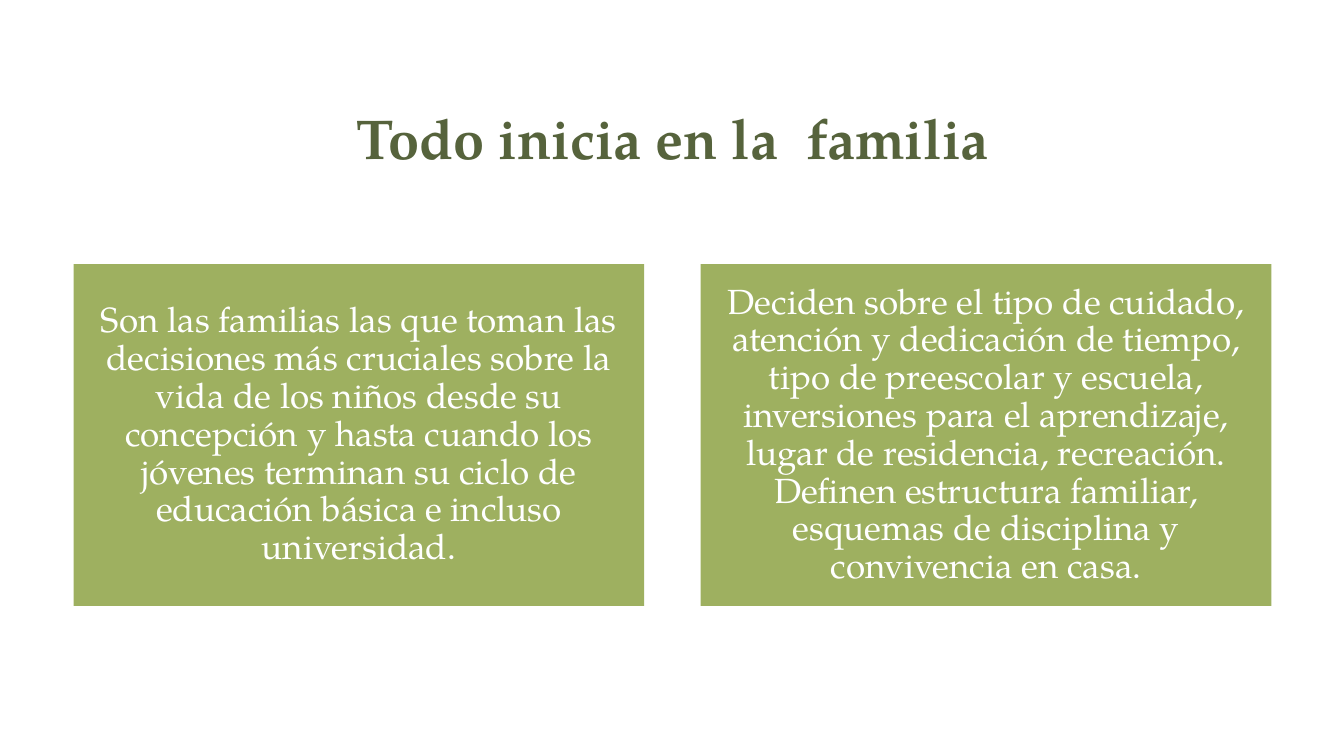
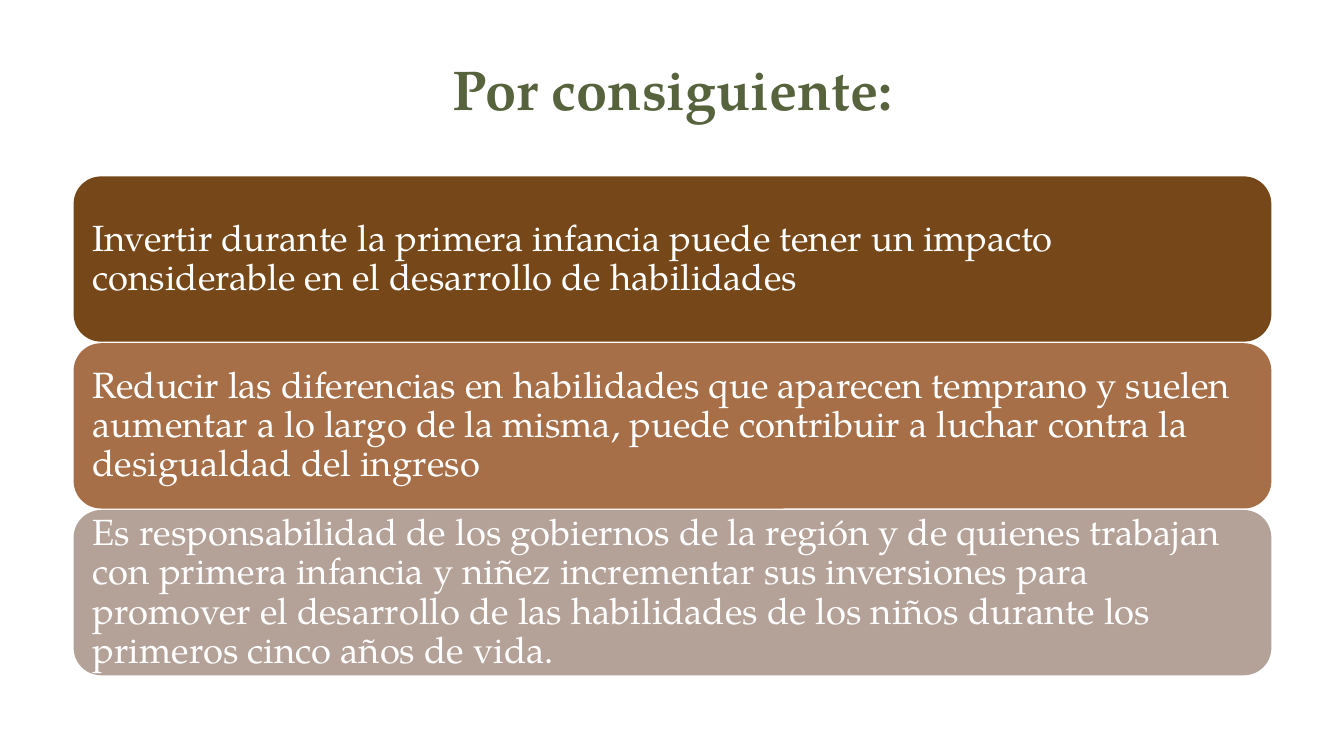
from pptx import Presentation
from pptx.dml.color import RGBColor
from pptx.enum.shapes import MSO_SHAPE as Shape
from pptx.enum.text import MSO_ANCHOR as Anchor, PP_ALIGN as Align
from pptx.util import Inches, Pt

FONT = "TeX Gyre Pagella"
WHITE = RGBColor(0xFF, 0xFF, 0xFF)
TITLE_GREEN = RGBColor(0x56, 0x63, 0x3C)
CARD_GREEN = RGBColor(0x9E, 0xB0, 0x60)
DARK_BROWN = RGBColor(0x76, 0x48, 0x19)
COPPER = RGBColor(0xA6, 0x6F, 0x48)
TAUPE = RGBColor(0xB4, 0xA2, 0x99)

LEFT, WIDTH = 0.73, 11.88

FAMILY_DECISIONS = [
    "Son las familias las que toman las decisiones más cruciales sobre la vida "
    "de los niños desde su concepción y hasta cuando los jóvenes terminan su "
    "ciclo de educación básica e incluso universidad.",
    "Deciden sobre el tipo de cuidado, atención y dedicación de tiempo, tipo de "
    "preescolar y escuela, inversiones para el aprendizaje, lugar de residencia, "
    "recreación. Definen estructura familiar, esquemas de disciplina y "
    "convivencia en casa.",
]
CONCLUSIONS = [
    (DARK_BROWN,
     "Invertir durante la primera infancia puede tener un impacto considerable "
     "en el desarrollo de habilidades"),
    (COPPER,
     "Reducir las diferencias en habilidades que aparecen temprano y suelen "
     "aumentar a lo largo de la misma, puede contribuir a luchar contra la "
     "desigualdad del ingreso"),
    (TAUPE,
     "Es responsabilidad de los gobiernos de la región y de quienes trabajan con "
     "primera infancia y niñez incrementar sus inversiones para promover el "
     "desarrollo de las habilidades de los niños durante los primeros cinco años "
     "de vida."),
]


def write(frame, text, size, color, align, anchor, inset, bold=False, spacing=None):
    frame.word_wrap = True
    frame.vertical_anchor = anchor
    frame.margin_left = frame.margin_right = Inches(inset)
    frame.margin_top = frame.margin_bottom = Inches(inset)
    paragraph = frame.paragraphs[0]
    paragraph.alignment = align
    paragraph.line_spacing = spacing
    run = paragraph.add_run()
    run.text = text
    run.font.name = FONT
    run.font.size = Pt(size)
    run.font.bold = bold
    run.font.color.rgb = color


def add_title(slide, text, top, height):
    title = slide.shapes.add_textbox(
        Inches(LEFT), Inches(top), Inches(WIDTH), Inches(height))
    write(title.text_frame, text, 40, TITLE_GREEN, Align.CENTER, Anchor.BOTTOM,
          0, bold=True)


def add_panel(slide, outline, box, fill, text, size, align, inset):
    panel = slide.shapes.add_shape(outline, *map(Inches, box))
    panel.shadow.inherit = False
    panel.fill.solid()
    panel.fill.fore_color.rgb = fill
    panel.line.fill.background()
    write(panel.text_frame, text, size, WHITE, align, Anchor.MIDDLE, inset,
          spacing=0.9)


def add_columns(slide, box, texts, card_width):
    left, top, width, height = box
    pitch = (width - card_width) / (len(texts) - 1)
    for index, text in enumerate(texts):
        card = (left + index * pitch, top, card_width, height)
        add_panel(slide, Shape.RECTANGLE, card, CARD_GREEN, text, 25,
                  Align.CENTER, 0.1)


def add_rows(slide, box, rows, row_height):
    left, top, width, height = box
    pitch = (height - row_height) / (len(rows) - 1)
    for index, (fill, text) in enumerate(rows):
        row = (left, top + index * pitch, width, row_height)
        add_panel(slide, Shape.ROUNDED_RECTANGLE, row, fill, text, 26,
                  Align.LEFT, 0.11)


def main():
    deck = Presentation()
    deck.slide_width, deck.slide_height = Inches(13.33), Inches(7.5)
    blank = deck.slide_layouts[6]

    family = deck.slides.add_slide(blank)
    add_title(family, "Todo inicia en la  familia", 0.1, 1.59)
    add_columns(family, (LEFT, 2.62, WIDTH, 3.39), FAMILY_DECISIONS, 5.66)

    conclusion = deck.slides.add_slide(blank)
    add_title(conclusion, "Por consiguiente:", 0.49, 0.72)
    add_rows(conclusion, (LEFT, 1.75, WIDTH, 4.95), CONCLUSIONS, 1.64)

    deck.save("out.pptx")


if __name__ == "__main__":
    main()
